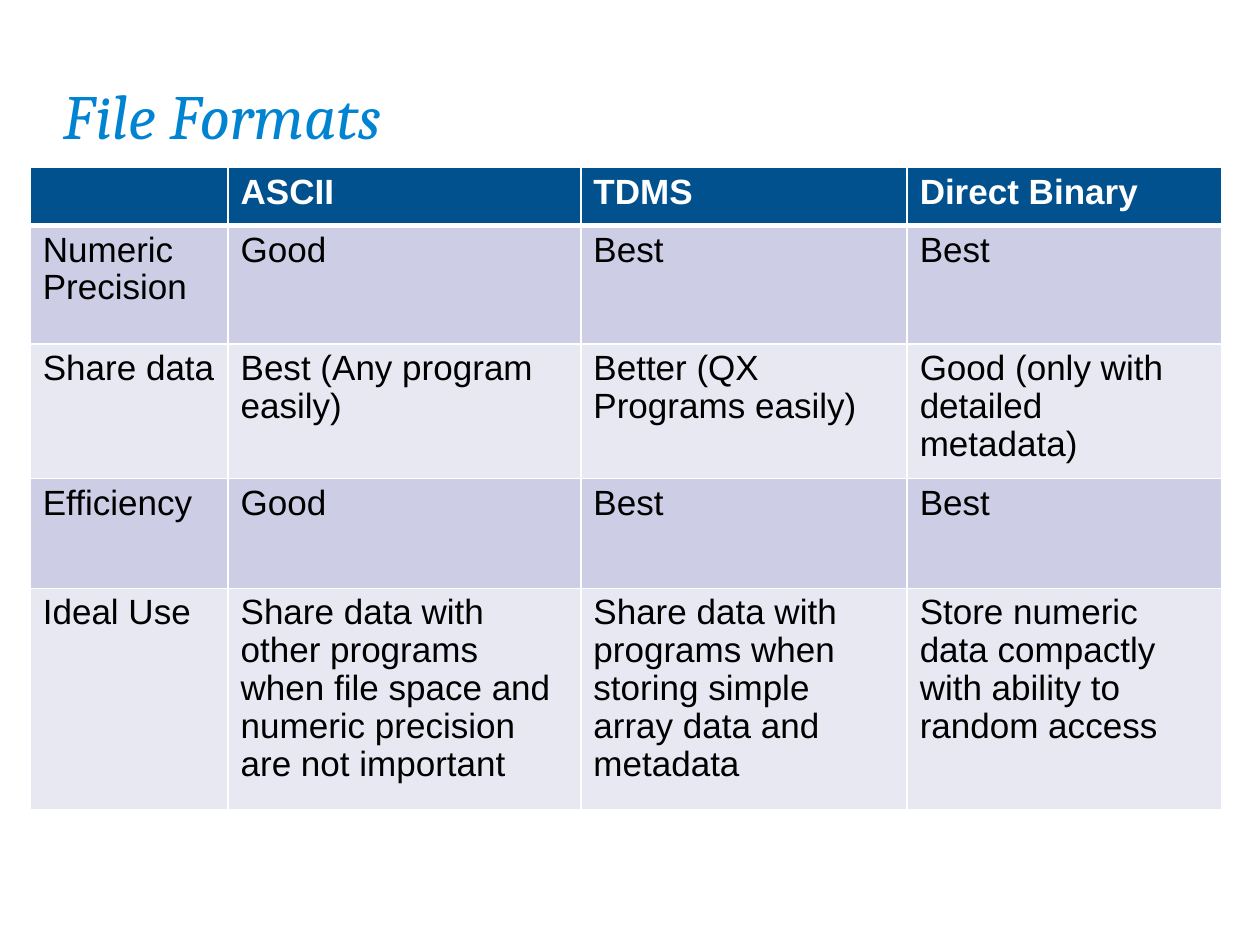
import pptx
import pptx.util
import pptx.dml.color
import pptx.enum.text
import pptx.oxml
import pptx.oxml.ns

Inches = pptx.util.Inches
Pt = pptx.util.Pt
RGBColor = pptx.dml.color.RGBColor

WHITE = RGBColor(0xFF, 0xFF, 0xFF)
BLACK = RGBColor(0x00, 0x00, 0x00)
TITLE_BLUE = RGBColor(0x00, 0x84, 0xD1)
HEADER_BLUE = RGBColor(0x00, 0x51, 0x8E)
BANDS = [RGBColor(0xE8, 0xE8, 0xF3), RGBColor(0xCD, 0xCD, 0xE6)]

COLUMN_WIDTHS = [1.57, 2.8, 2.59, 2.5]
ROW_HEIGHTS = [0.46, 0.94, 1.07, 0.87, 1.76]
FORMATS = [
    ["", "ASCII", "TDMS", "Direct Binary"],
    ["Numeric Precision", "Good", "Best", "Best"],
    ["Share data", "Best (Any program easily)", "Better (QX Programs easily)",
     "Good (only with detailed metadata)"],
    ["Efficiency", "Good", "Best", "Best"],
    ["Ideal Use",
     "Share data with other programs when file space and numeric precision are not important",
     "Share data with programs when storing simple array data and metadata",
     "Store numeric data compactly with ability to random access"],
]


def add_run(p, text, font, size, color, bold=False, italic=False):
    r = p.add_run()
    r.text = text
    r.font.name = font
    r.font.size = Pt(size)
    r.font.color.rgb = color
    r.font.bold = bold
    r.font.italic = italic


def set_title(s, text):
    sp = s.shapes.title
    sp.left, sp.top = Inches(0.5), Inches(0.3)
    sp.width, sp.height = Inches(9), Inches(1.25)
    tf = sp.text_frame
    tf.word_wrap = True
    tf.auto_size = pptx.enum.text.MSO_AUTO_SIZE.NONE
    tf.vertical_anchor = pptx.enum.text.MSO_ANCHOR.MIDDLE
    tf.margin_left = tf.margin_right = tf.margin_bottom = 0
    tf.margin_top = Inches(0.01)
    p = tf.paragraphs[0]
    p.alignment = pptx.enum.text.PP_ALIGN.LEFT
    p.line_spacing = 0.98
    add_run(p, text, "Cambria", 36, TITLE_BLUE, italic=True)


def set_borders(cell, top, bottom):
    """Draw white cell borders; widths in points, sides always 1."""
    tc_pr = cell._tc.get_or_add_tcPr()
    for side, width in (("L", 1), ("R", 1), ("T", top), ("B", bottom)):
        tc_pr.append(pptx.oxml.parse_xml(
            f'<a:ln{side} {pptx.oxml.ns.nsdecls("a")} w="{Pt(width)}">'
            f'<a:solidFill><a:srgbClr val="{WHITE}"/></a:solidFill></a:ln{side}>'))


def fill_cell(cell, text, row):
    header = row == 0
    # The rule below the header is shared by the first two rows
    set_borders(cell, top=3 if row == 1 else 1, bottom=3 if header else 1)
    cell.fill.solid()
    cell.fill.fore_color.rgb = HEADER_BLUE if header else BANDS[row % 2]
    if text:
        p = cell.text_frame.paragraphs[0]
        p.line_spacing = 0.97
        add_run(p, text, "Arial", 20, WHITE if header else BLACK, bold=header)


def add_format_table(s):
    frame = s.shapes.add_table(
        len(ROW_HEIGHTS), len(COLUMN_WIDTHS), Inches(0.24), Inches(1.33),
        Inches(sum(COLUMN_WIDTHS)), Inches(sum(ROW_HEIGHTS)))
    table = frame.table
    for column, width in zip(table.columns, COLUMN_WIDTHS):
        column.width = Inches(width)
    for row, height in zip(table.rows, ROW_HEIGHTS):
        row.height = Inches(height)
    for i, texts in enumerate(FORMATS):
        for j, text in enumerate(texts):
            fill_cell(table.cell(i, j), text, i)


def main():
    prs = pptx.Presentation()
    prs.slide_width, prs.slide_height = Inches(10), Inches(7.5)
    s = prs.slides.add_slide(prs.slide_layouts[5])  # Title Only

    # Heading
    set_title(s, "File Formats")

    # Comparison of the formats
    add_format_table(s)

    prs.save("out.pptx")


if __name__ == "__main__":
    main()
